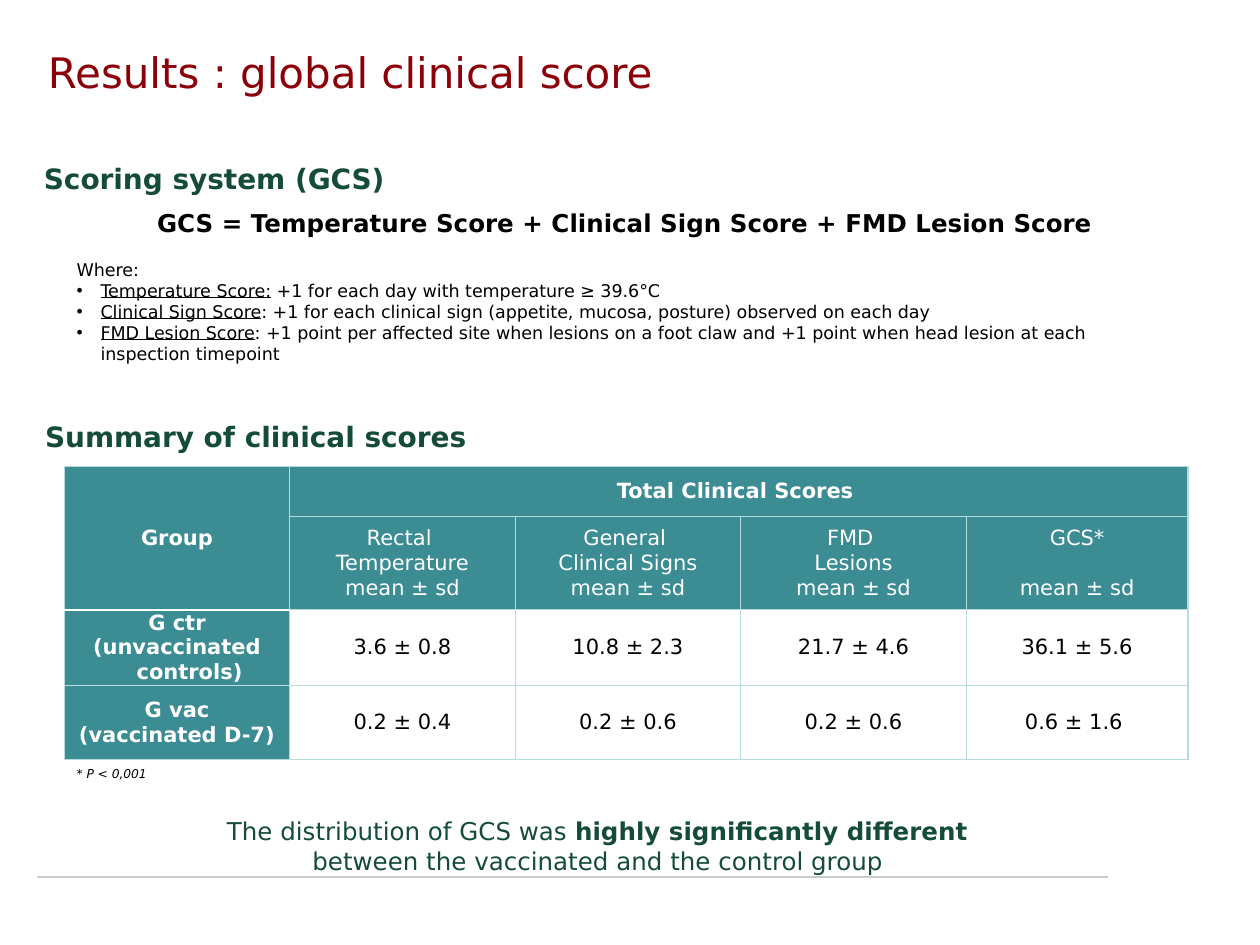
from dataclasses import dataclass

from lxml.etree import SubElement
from pptx import Presentation
from pptx.dml.color import RGBColor
from pptx.enum.shapes import MSO_CONNECTOR
from pptx.enum.text import MSO_ANCHOR, MSO_AUTO_SIZE, PP_ALIGN
from pptx.oxml.ns import qn
from pptx.util import Inches, Pt


@dataclass(frozen=True)
class Theme:
    font: str = "DejaVu Sans"
    title: str = "8C0009"
    green: str = "144C38"
    teal: str = "3C8C93"
    border: str = "B6DCDF"
    rule: str = "CBCBCB"
    white: str = "FFFFFF"
    black: str = "000000"
    title_size: float = 24
    heading_size: float = 16
    statement_size: float = 14
    table_size: float = 12
    body_size: float = 10
    note_size: float = 7


THEME = Theme()

DEFINITIONS = [
    ("Temperature Score:", " +1 for each day with temperature ≥ 39.6°C"),
    ("Clinical Sign Score", ": +1 for each clinical sign (appetite, mucosa, posture) observed on each day"),
    ("FMD Lesion Score", ": +1 point per affected site when lesions on a foot claw and "
     "+1 point when head lesion at each inspection timepoint"),
]
COLUMN_HEADS = [
    ["Rectal ", "Temperature", "mean ± sd"],
    ["General ", "Clinical Signs", "mean ± sd"],
    ["FMD ", "Lesions", "mean ± sd"],
    ["GCS*", "mean ± sd"],
]
GROUPS = [
    (["G ctr", "(unvaccinated controls)"], ["3.6 ± 0.8", "10.8 ± 2.3", "21.7 ± 4.6", "36.1 ± 5.6"]),
    (["G vac", "(vaccinated D-7)"], ["0.2 ± 0.4", "0.2 ± 0.6", "0.2 ± 0.6", "0.6 ± 1.6 "]),
]


def add_run(paragraph, text, size, color, bold=False, italic=False, underline=False):
    run = paragraph.add_run()
    run.text = text
    font = run.font
    font.name, font.size = THEME.font, Pt(size)
    font.bold, font.italic, font.underline = bold, italic, underline
    font.color.rgb = RGBColor.from_string(color)


def next_paragraph(frame):
    """Return the empty first paragraph, or a new one after the last."""
    last = frame.paragraphs[-1]
    return frame.add_paragraph() if last.runs else last


def set_indent(paragraph, length, bullet=None):
    properties = paragraph._p.get_or_add_pPr()
    properties.set("marL", str(Inches(length)))
    properties.set("indent", str(Inches(-length)))
    if bullet:
        SubElement(properties, qn("a:buFont")).set("typeface", "Arial")
        SubElement(properties, qn("a:buChar")).set("char", bullet)


def add_text_frame(slide, box, wrap=False):
    frame = slide.shapes.add_textbox(*map(Inches, box)).text_frame
    frame.word_wrap = wrap
    return frame


def add_title(slide, box, text):
    title = slide.shapes.title
    title.left, title.top, title.width, title.height = map(Inches, box)
    frame = title.text_frame
    frame.auto_size = MSO_AUTO_SIZE.NONE
    frame.vertical_anchor = MSO_ANCHOR.MIDDLE
    frame.paragraphs[0].alignment = PP_ALIGN.LEFT
    add_run(frame.paragraphs[0], text, THEME.title_size, THEME.title)


def add_rule(slide, left, top, width):
    rule = slide.shapes.add_connector(
        MSO_CONNECTOR.STRAIGHT, Inches(left), Inches(top), Inches(left + width), Inches(top))
    rule.line.color.rgb = RGBColor.from_string(THEME.rule)
    rule.line.width = Pt(1)
    SubElement(rule._element.spPr, qn("a:effectLst"))


def add_heading(slide, box, text):
    frame = add_text_frame(slide, box)
    add_run(frame.paragraphs[0], text, THEME.heading_size, THEME.green, bold=True)


def add_scoring_system(slide, box):
    frame = add_text_frame(slide, box, wrap=True)
    formula = frame.paragraphs[0]
    formula.alignment = PP_ALIGN.CENTER
    add_run(formula, "GCS = Temperature Score + Clinical Sign Score + FMD Lesion Score",
            THEME.statement_size, THEME.black, bold=True)
    where = next_paragraph(frame)
    where.space_before = Pt(12.2)
    add_run(where, "Where:", THEME.body_size, THEME.black)
    for term, meaning in DEFINITIONS:
        paragraph = next_paragraph(frame)
        set_indent(paragraph, 0.19, "•")
        add_run(paragraph, term, THEME.body_size, THEME.black, underline=True)
        add_run(paragraph, meaning, THEME.body_size, THEME.black)


def set_borders(cell, **colors):
    """Line every side; a side named left, right, top or bottom takes its own colour."""
    properties = cell._tc.get_or_add_tcPr()
    sides = {"left": "a:lnL", "right": "a:lnR", "top": "a:lnT", "bottom": "a:lnB"}
    for position, (side, tag) in enumerate(sides.items()):
        line = SubElement(properties, qn(tag))
        line.set("w", str(Pt(1 if side in colors else 0.75)))
        fill = SubElement(line, qn("a:solidFill"))
        SubElement(fill, qn("a:srgbClr")).set("val", colors.get(side, THEME.border))
        properties.insert(position, line)


def fill_cell(cell, lines, header=True, bold=False, indent=0):
    cell.vertical_anchor = MSO_ANCHOR.MIDDLE
    cell.margin_left = cell.margin_right = Inches(0.07)
    cell.margin_top = cell.margin_bottom = 0
    for text in lines:
        paragraph = next_paragraph(cell.text_frame)
        paragraph.alignment = PP_ALIGN.CENTER
        if indent:
            set_indent(paragraph, indent)
        add_run(paragraph, text, THEME.table_size, THEME.white if header else THEME.black, bold)


def add_score_table(slide, box):
    widths = [1.79] * 4 + [1.76]
    heights = [0.4, 0.74, 0.6, 0.59]
    table = slide.shapes.add_table(len(heights), len(widths), *map(Inches, box)).table
    for column, width in zip(table.columns, widths):
        column.width = Inches(width)
    for row, height in zip(table.rows, heights):
        row.height = Inches(height)

    for r in range(len(heights)):
        for c in range(len(widths)):
            cell = table.cell(r, c)
            if r < 2 or c == 0:
                cell.fill.solid()
                cell.fill.fore_color.rgb = RGBColor.from_string(THEME.teal)
            else:
                cell.fill.background()
            white_sides = {0: ["bottom"], 1: ["bottom"], 2: ["top"]}.get(r, []) if c == 0 else []
            set_borders(cell, **dict.fromkeys(white_sides, THEME.white))
    table.cell(0, 0).merge(table.cell(1, 0))
    table.cell(0, 1).merge(table.cell(0, 4))

    fill_cell(table.cell(0, 0), ["Group"], bold=True)
    fill_cell(table.cell(0, 1), ["Total Clinical Scores "], bold=True)
    for c, lines in enumerate(COLUMN_HEADS, start=1):
        fill_cell(table.cell(1, c), lines)
        missing_lines = 3 - len(lines)
        if missing_lines:
            table.cell(1, c).text_frame.paragraphs[-1].space_before = Pt(14 * missing_lines)
    for r, (group, scores) in enumerate(GROUPS, start=2):
        fill_cell(table.cell(r, 0), group, bold=True, indent=0.2)
        for c, score in enumerate(scores, start=1):
            fill_cell(table.cell(r, c), [score], header=False)


def add_footnote(slide, box, text):
    frame = add_text_frame(slide, box)
    add_run(frame.paragraphs[0], text, THEME.note_size, THEME.black, italic=True)


def add_conclusion(slide, box):
    frame = add_text_frame(slide, box)
    lines = [
        [("The distribution of GCS was ", False), ("highly significantly different ", True)],
        [("between the vaccinated and the control group ", False)],
    ]
    for line in lines:
        paragraph = next_paragraph(frame)
        paragraph.alignment = PP_ALIGN.CENTER
        for text, bold in line:
            add_run(paragraph, text, THEME.statement_size, THEME.green, bold)


def main():
    presentation = Presentation()
    presentation.slide_width, presentation.slide_height = Inches(10), Inches(7.5)
    slide = presentation.slides.add_slide(presentation.slide_layouts[5])
    add_rule(slide, 0.29, 6.96, 8.5)
    add_title(slide, (0.28, 0.07, 8.5, 1), "Results : global clinical score")
    add_heading(slide, (0.25, 1.23, 2.96, 0.37), "Scoring system (GCS)")
    add_scoring_system(slide, (0.51, 1.6, 8.9, 1.69))
    add_heading(slide, (0.26, 3.28, 3.58, 0.37), "Summary of clinical scores")
    add_score_table(slide, (0.51, 3.7, 8.92, 2.33))
    add_footnote(slide, (0.51, 6.03, 0.8, 0.22), "* P < 0,001")
    add_conclusion(slide, (1.68, 6.43, 6.19, 0.57))
    presentation.save("out.pptx")


if __name__ == "__main__":
    main()
